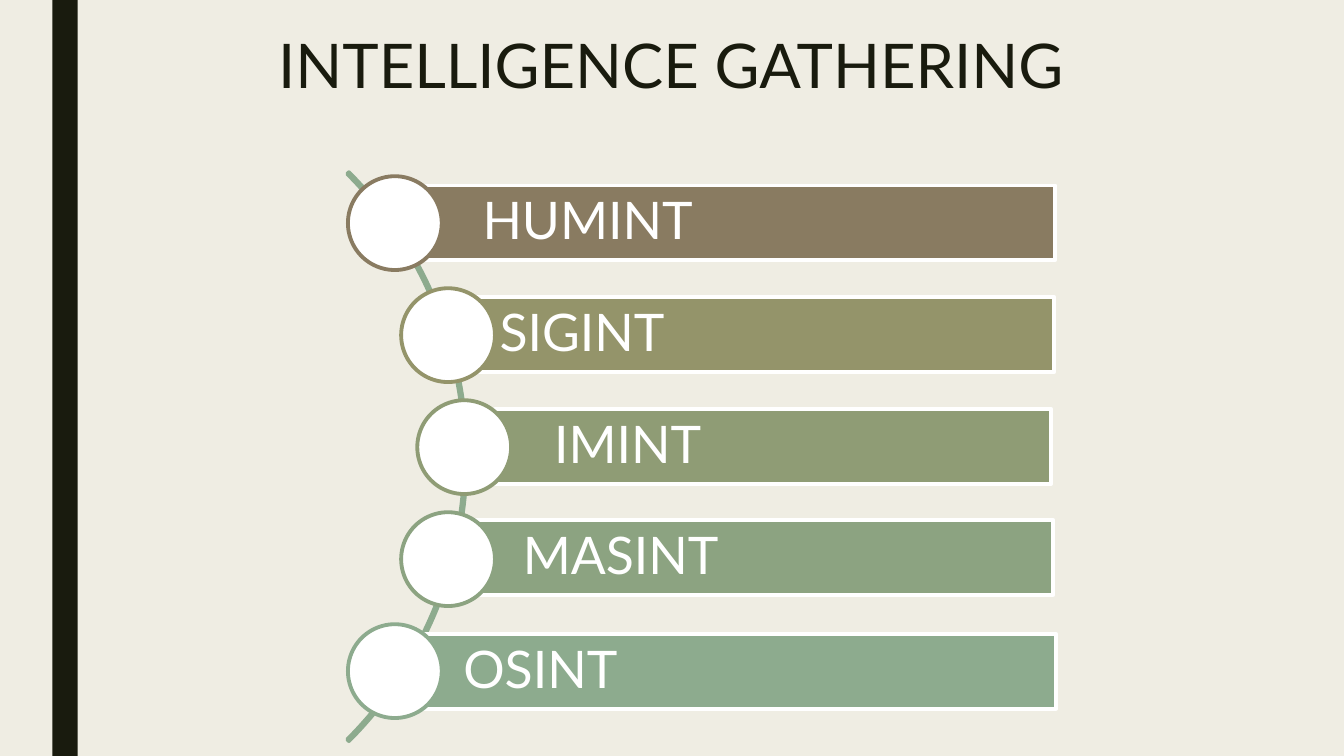
from math import sqrt

from pptx import Presentation
from pptx.dml.color import RGBColor
from pptx.enum.shapes import MSO_SHAPE
from pptx.enum.text import MSO_ANCHOR, MSO_AUTO_SIZE, PP_ALIGN
from pptx.util import Pt

RECTANGLE, OVAL, ARC = MSO_SHAPE.RECTANGLE, MSO_SHAPE.OVAL, MSO_SHAPE.BLOCK_ARC
TOP, MIDDLE = MSO_ANCHOR.TOP, MSO_ANCHOR.MIDDLE
LEFT = PP_ALIGN.LEFT
NO_AUTOFIT = MSO_AUTO_SIZE.NONE

TITLE = "INTELLIGENCE GATHERING"
DISCIPLINES = [
    {"name": "HUMINT", "color": "897B61", "left": 302.4, "top": 132.5, "width": 451.4},
    {"name": "SIGINT", "color": "94946A", "left": 314.6, "top": 212.4, "width": 438.5},
    {"name": "IMINT", "color": "8F9C75", "left": 353.5, "top": 292.3, "width": 397.4},
    {"name": "MASINT", "color": "8CA381", "left": 331.2, "top": 371.5, "width": 421.2},
    {"name": "OSINT", "color": "8DAB8E", "left": 288.7, "top": 452.9, "width": 465.8},
]
THEME = {
    "font": "Lato",
    "background": "EFEDE3",
    "dark": "191B0E",
    "light": "FFFFFF",
    "arc": "8DAB8E",
    "title_size": 44,
    "label_size": 37,
    "line_width": 2.75,
}
BAR_HEIGHT = 53.3
CIRCLE_SIZE = 67
CIRCLE_PITCH = 80
ORBIT_X, ORBIT_Y, ORBIT_RADIUS = 48.6, 319.4, 283
ARC_BOX = (-241.2, 38.9, 574.6, 574.6)


def add_figure(slide, kind, box, fill=None, line=None):
    shape = slide.shapes.add_shape(kind, *map(Pt, box))
    shape.shadow.inherit = False
    if fill:
        shape.fill.solid()
        shape.fill.fore_color.rgb = RGBColor.from_string(fill)
    else:
        shape.fill.background()
    if line:
        shape.line.color.rgb = RGBColor.from_string(line)
        shape.line.width = Pt(THEME["line_width"])
    else:
        shape.line.fill.background()
    return shape


def write_text(shape, text, *, size, color, anchor, left_inset=7.2, inset=7.2, spacing=0.9):
    frame = shape.text_frame
    frame.word_wrap = True
    frame.auto_size = NO_AUTOFIT
    frame.vertical_anchor = anchor
    frame.margin_left = Pt(left_inset)
    frame.margin_right = Pt(7.2)
    frame.margin_top = frame.margin_bottom = Pt(inset)
    paragraph = frame.paragraphs[0]
    paragraph.alignment = LEFT
    paragraph.line_spacing = spacing
    run = paragraph.add_run()
    run.text = text
    run.font.name = THEME["font"]
    run.font.size = Pt(size)
    run.font.color.rgb = RGBColor.from_string(color)


def add_title(slide):
    title = slide.shapes.title
    title.left, title.top, title.width, title.height = map(Pt, (191.5, 22.3, 756, 116.6))
    write_text(title, TITLE, size=THEME["title_size"], color=THEME["dark"],
               anchor=TOP, inset=3.6, spacing=0.89)


def add_discipline(slide, index, discipline):
    bar_box = (discipline["left"], discipline["top"], discipline["width"], BAR_HEIGHT)
    bar = add_figure(slide, RECTANGLE, bar_box, discipline["color"], THEME["light"])
    write_text(bar, discipline["name"], size=THEME["label_size"], color=THEME["light"],
               anchor=MIDDLE, left_inset=42.3)
    offset = (index - (len(DISCIPLINES) - 1) / 2) * CIRCLE_PITCH
    center_x = ORBIT_X + sqrt(ORBIT_RADIUS ** 2 - offset ** 2)
    center_y = ORBIT_Y + offset
    circle_box = (center_x - CIRCLE_SIZE / 2, center_y - CIRCLE_SIZE / 2, CIRCLE_SIZE, CIRCLE_SIZE)
    add_figure(slide, OVAL, circle_box, THEME["light"], discipline["color"])


def main():
    presentation = Presentation()
    presentation.slide_width, presentation.slide_height = Pt(960), Pt(540)
    slide = presentation.slides.add_slide(presentation.slide_layouts[5])
    slide.background.fill.solid()
    slide.background.fill.fore_color.rgb = RGBColor.from_string(THEME["background"])
    add_figure(slide, RECTANGLE, (37.4, 0, 18, 540), THEME["dark"])
    add_title(slide)
    arc = add_figure(slide, ARC, ARC_BOX, line=THEME["arc"])
    for position, value in enumerate((189, 27, 0.003)):
        arc.adjustments[position] = value
    for index, discipline in enumerate(DISCIPLINES):
        add_discipline(slide, index, discipline)
    presentation.save("out.pptx")


if __name__ == "__main__":
    main()
